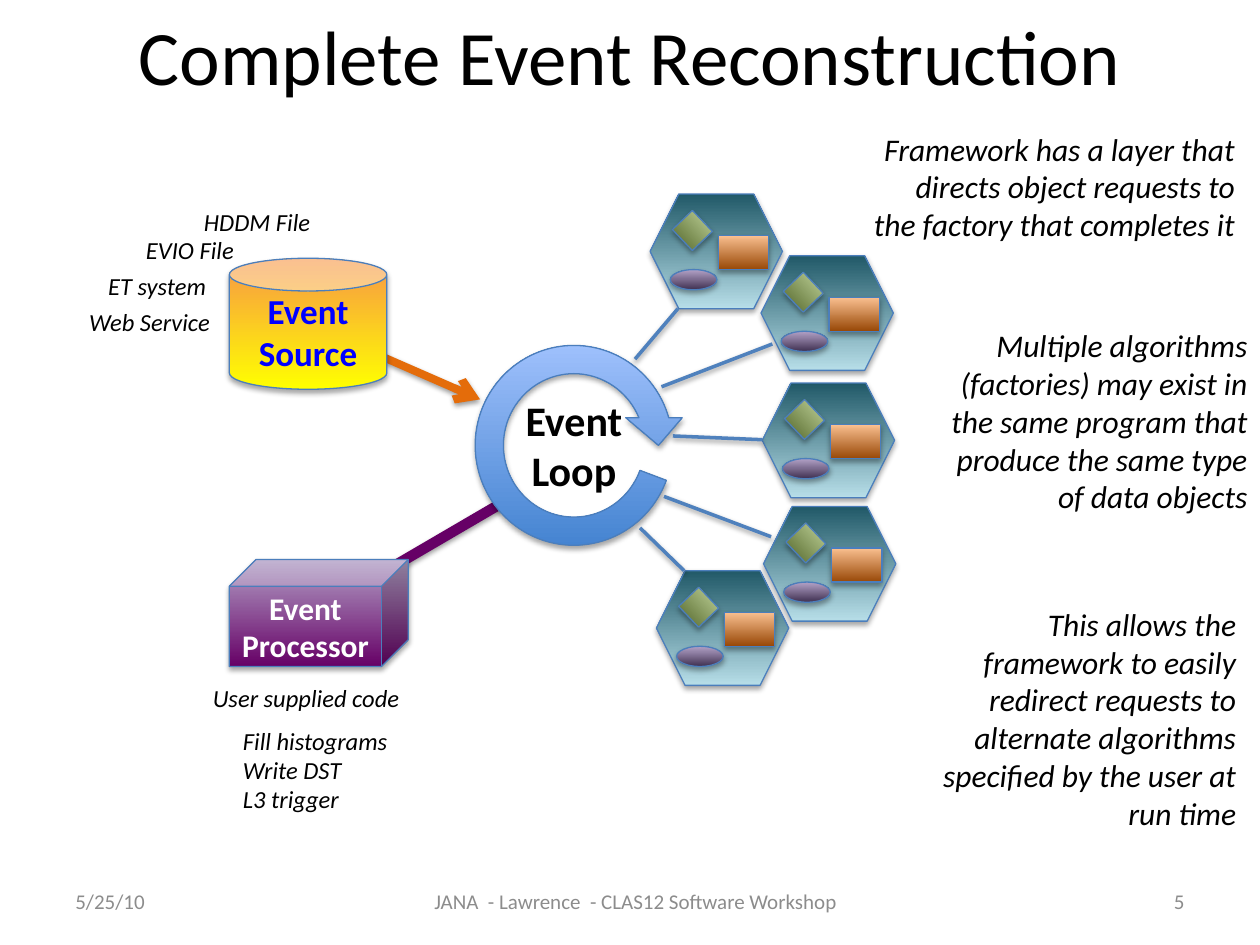
"""Build the event reconstruction diagram slide."""
from lxml import etree
from pptx import Presentation
from pptx import util as u
from pptx.dml.color import RGBColor
from pptx.enum import shapes, text
from pptx.oxml.ns import qn

FONT = "Calibri"
COLORS = {
    "black": "000000", "white": "FFFFFF", "gray": "8C8C8C", "blue": "0000FF",
    "outline": "4B7EBC", "spoke": "4F81BD", "orange": "E46C0A", "purple": "660066",
}
GRADIENTS = {
    "teal": ("B7DEE8", "215968"), "violet": ("403152", "B3A2C7"),
    "green": ("4F6228", "C3D69B"), "rust": ("984807", "FAC090"),
    "ring": ("3F80CE", "A4C4FF"), "plum": ("660066", "B3A2C7"),
    "sun": ("FFFF00", "F79646"),
}
S = shapes.MSO_SHAPE
LEFT, CENTER, RIGHT = text.PP_ALIGN.LEFT, text.PP_ALIGN.CENTER, text.PP_ALIGN.RIGHT
TOP, MIDDLE = text.MSO_ANCHOR.TOP, text.MSO_ANCHOR.MIDDLE

TITLE = "Complete Event Reconstruction"
FOOTERS = [
    ("5/25/10", 0.5, 2.33, LEFT),
    ("JANA  - Lawrence  - CLAS12 Software Workshop", 2.92, 4.25, CENTER),
    ("5", 7.17, 2.33, RIGHT),
]
LABELS = [
    ("HDDM File", (1.52, 1.59, 1.1, 0.34)),
    ("EVIO File", (1.06, 1.82, 0.95, 0.34)),
    ("ET system", (0.76, 2.1, 1.03, 0.34)),
    ("Web Service", (0.61, 2.39, 1.21, 0.34)),
    ("User supplied code", (1.59, 5.37, 1.79, 0.34)),
    ("Fill histograms\nWrite DST\nL3 trigger", (1.83, 5.71, 1.4, 0.81)),
]
NOTES = [
    ("Framework has a layer that directs object requests to the factory "
     "that completes it", (6.83, 0.98, 3.07, 1.01)),
    ("This allows the framework to easily redirect requests to alternate "
     "algorithms specified by the user at run time", (7.17, 4.75, 2.74, 1.92)),
    ("Multiple algorithms (factories) may exist in the same program that "
     "produce the same type of data objects", (7.26, 2.54, 2.74, 1.62)),
]
FACTORIES = [(6.06, 4.02), (5.16, 1.54), (6.05, 3.04), (5.21, 4.53), (6.04, 2.03)]
FACTORY_PARTS = [
    (S.HEXAGON, (0, 0, 1.05, 0.91), "teal", 0),
    (S.OVAL, (0.16, 0.6, 0.37, 0.16), "violet", 0),
    (S.RECTANGLE, (0.22, 0.18, 0.23, 0.22), "green", 46.4),
    (S.RECTANGLE, (0.54, 0.33, 0.4, 0.27), "rust", 0),
]
SPOKES = [
    ((5.38, 2.45), (5.04, 2.85)), ((6.13, 2.73), (5.25, 3.07)),
    ((6.05, 3.49), (5.34, 3.46)), ((6.12, 4.26), (5.27, 3.94)),
    ((5.43, 4.53), (5.08, 4.19)),
]
RING_ADJUSTMENTS = (0.125, 11.423, 204.577, 12.441, 0.125)


def rgb(name):
    return RGBColor.from_string(COLORS.get(name, name))


def inches(values):
    return [u.Inches(v) for v in values]


def add_shadow(sp, opacity, distance):
    effects = etree.SubElement(sp._element.spPr, qn("a:effectLst"))
    shadow = etree.SubElement(
        effects, qn("a:outerShdw"), blurRad=str(u.Pt(3.1)),
        dist=str(u.Pt(distance)), dir="5400000", rotWithShape="0")
    color = etree.SubElement(shadow, qn("a:srgbClr"), val=COLORS["black"])
    etree.SubElement(color, qn("a:alpha"), val=str(opacity * 1000))


def write(sp, content, size, color="black", align=LEFT, anchor=TOP, wrap=True,
          bold=False, italic=False):
    tf = sp.text_frame
    tf.text = content
    tf.word_wrap = wrap
    tf.vertical_anchor = anchor
    for p in tf.paragraphs:
        p.alignment = align
        p.font.name, p.font.size = FONT, u.Pt(size)
        p.font.bold, p.font.italic = bold, italic
        p.font.color.rgb = rgb(color)


def add_text(s, content, box, size, **style):
    write(s.shapes.add_textbox(*inches(box)), content, size, **style)


def add_shape(parent, kind, box, gradient, rotation=0):
    sp = parent.shapes.add_shape(kind, *inches(box))
    sp.rotation = rotation
    sp.fill.gradient()
    sp.fill.gradient_angle = 90
    for stop, color, position in zip(sp.fill.gradient_stops, GRADIENTS[gradient], (0, 1)):
        stop.color.rgb = rgb(color)
        stop.position = position
    sp.line.color.rgb = rgb("outline")
    sp.line.width = u.Pt(0.75)
    add_shadow(sp, 35, 1.8)
    return sp


def add_line(s, start, end, color, width, arrow=False):
    line = s.shapes.add_connector(
        shapes.MSO_CONNECTOR.STRAIGHT, *inches(start + end))
    line.line.color.rgb = rgb(color)
    line.line.width = u.Pt(width)
    if arrow:
        etree.SubElement(line.line._get_or_add_ln(), qn("a:tailEnd"), type="arrow")
    add_shadow(line, 38, 1.6)


def add_factory(s, left, top):
    group = s.shapes.add_group_shape()
    for kind, (dx, dy, width, height), gradient, rotation in FACTORY_PARTS:
        add_shape(group, kind, (left + dx, top + dy, width, height), gradient, rotation)


def main():
    prs = Presentation()
    prs.slide_width, prs.slide_height = inches((10, 7.5))
    s = prs.slides.add_slide(prs.slide_layouts[5])

    title = s.shapes.title
    title.left, title.top, title.width, title.height = inches((0.5, 0, 9, 0.87))
    write(title, TITLE, 44, align=CENTER, anchor=MIDDLE)
    for content, left, width, align in FOOTERS:
        add_text(s, content, (left, 6.95, width, 0.4), 12, color="gray",
                 align=align, anchor=MIDDLE)

    add_line(s, (3.08, 4.52), (3.97, 4), "purple", 6)
    ring = add_shape(s, S.CIRCULAR_ARROW, (3.66, 2.63, 1.79, 1.81), "ring")
    for i, value in enumerate(RING_ADJUSTMENTS):
        ring.adjustments[i] = value
    add_text(s, "Event Loop", (4.03, 3.08, 1.05, 0.91), 24, align=CENTER, bold=True)

    for left, top in FACTORIES:
        add_factory(s, left, top)
    for start, end in SPOKES:
        add_line(s, start, end, "spoke", 2)
    add_line(s, (2.94, 2.79), (3.81, 3.17), "orange", 4.5, arrow=True)

    processor = add_shape(s, S.CUBE, (1.82, 4.44, 1.42, 0.85), "plum")
    write(processor, "Event Processor", 18, "white", CENTER, MIDDLE, bold=True)
    source = add_shape(s, S.CAN, (1.82, 2.05, 1.25, 1.04), "sun")
    write(source, "Event Source", 20, "blue", CENTER, MIDDLE, bold=True)

    for content, box in LABELS:
        add_text(s, content, box, 14, wrap=False, italic=True)
    for content, box in NOTES:
        add_text(s, content, box, 18, align=RIGHT, italic=True)
    prs.save("out.pptx")


if __name__ == "__main__":
    main()
